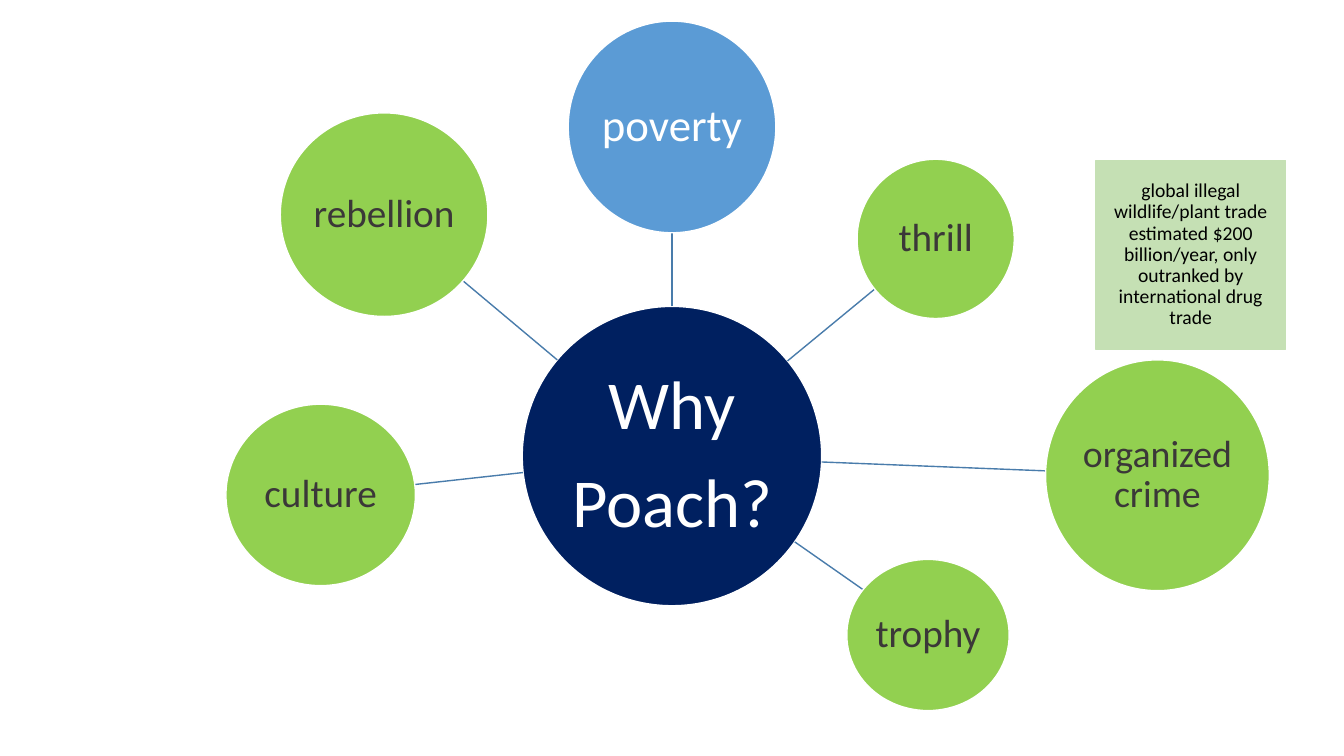
import math
import pptx
import pptx.util
import pptx.dml.color
import pptx.enum.shapes
import pptx.enum.text
import pptx.oxml

HUES = {"navy": "002060", "lime": "92D050", "blue": "5B9BD5", "pale": "C5E0B4",
        "line": "497CAB", "white": "FFFFFF", "dark": "3B3838", "black": "000000"}
KINDS = pptx.enum.shapes.MSO_SHAPE
Pt = pptx.util.Pt

deck = pptx.Presentation()
deck.slide_width = pptx.util.Inches(13.33)
deck.slide_height = pptx.util.Inches(7.5)
slide = deck.slides.add_slide(deck.slide_layouts[6])
COL, ROW = deck.slide_width / 100, deck.slide_height / 100


def hue(name):
    return pptx.dml.color.RGBColor.from_string(HUES[name])


def add_node(kind, spot, lines, size, fill, edge, ink, inset):
    """Draw a filled shape; spot is centre x, y, width, height in columns and rows."""
    x, y, wide, high = spot
    node = slide.shapes.add_shape(kind, round((x - wide / 2) * COL), round((y - high / 2) * ROW),
                                  round(wide * COL), round(high * ROW))
    node.shadow.inherit = False
    node.fill.solid()
    node.fill.fore_color.rgb = hue(fill)
    node.line.color.rgb = hue(edge)
    node.line.width = Pt(1)
    frame = node.text_frame
    looks = {"word_wrap": True, "vertical_anchor": pptx.enum.text.MSO_ANCHOR.MIDDLE}
    looks |= {f"margin_{side}": Pt(inset) for side in ("left", "top", "right", "bottom")}
    for key, value in looks.items():
        setattr(frame, key, value)
    frame.text = "\n".join(lines)
    for para in frame.paragraphs:
        for key, value in {"alignment": pptx.enum.text.PP_ALIGN.CENTER, "line_spacing": 0.9,
                           "space_after": Pt(0.35 * size)}.items():
            setattr(para, key, value)
        font = para.runs[0].font
        for key, value in {"name": "Calibri", "size": Pt(size)}.items():
            setattr(font, key, value)
        font.color.rgb = hue(ink)


# Centre x, centre y, width, height
hub = (50, 60.33, 22.28, 39.6)
add_node(KINDS.OVAL, hub, ["Why", "Poach?"], 49, "navy", "white", "white", 2)

causes = [
    ("thrill", (69.62, 31.6, 11.7, 21.07), 28, "lime", "dark"),
    ("trophy", (69.05, 84, 12.08, 20), 28, "lime", "dark"),
    ("poverty", (50, 16.8, 15.45, 28), 32, "blue", "white"),
    ("organized crime", (86.12, 62.87, 16.65, 30.53), 27, "lime", "dark"),
    ("culture", (23.86, 65.47, 14.1, 24), 28, "lime", "dark"),
    ("rebellion", (28.58, 28.4, 15.45, 26.93), 28, "lime", "dark"),
]
for word, spot, size, fill, ink in causes:
    # Each spoke runs from rim to rim along the line between the centres
    run, rise = spot[0] - hub[0], spot[1] - hub[1]
    ends = []
    for (x, y, wide, high), way in ((hub, 1), (spot, -1)):
        share = way / math.hypot(2 * run / wide, 2 * rise / high)
        ends += [round((x + run * share) * COL), round((y + rise * share) * ROW)]
    spoke = slide.shapes.add_connector(pptx.enum.shapes.MSO_CONNECTOR.STRAIGHT, *ends)
    spoke.line.color.rgb = hue("line")
    spoke.line.width = Pt(1)
    spoke._element.spPr.append(pptx.oxml.parse_xml(
        '<a:effectLst xmlns:a="http://schemas.openxmlformats.org/drawingml/2006/main"/>'))
    add_node(KINDS.OVAL, spot, [word], size, fill, "white", ink, 1.5)

fact = ("global illegal wildlife/plant trade estimated $200 billion/year, "
        "only outranked by international drug trade")
add_node(KINDS.RECTANGLE, (88.6, 33.73, 14.1, 25.07), [fact], 14, "pale", "pale", "black", 1)

deck.save("out.pptx")
